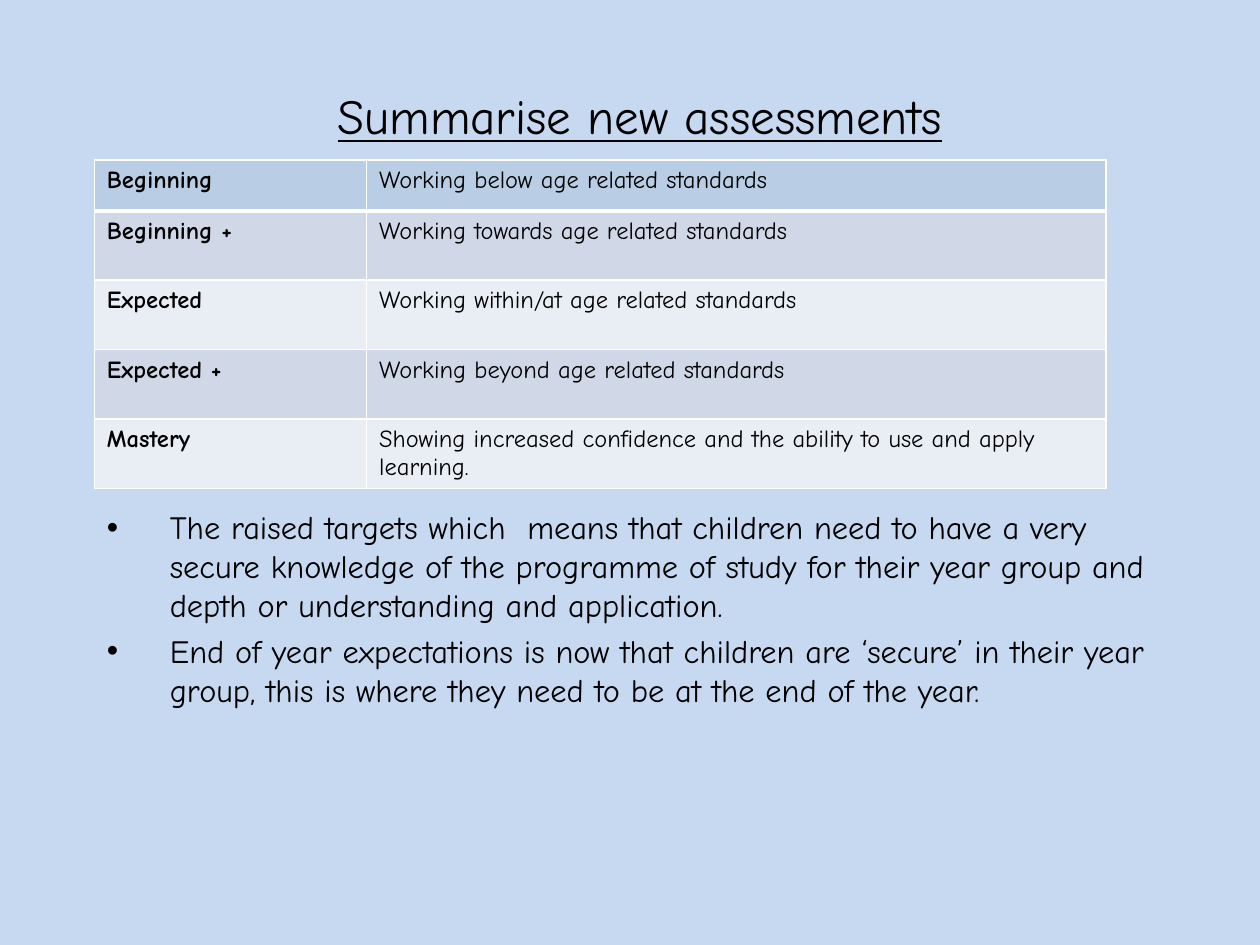
from lxml import etree
from pptx import Presentation
from pptx.dml.color import RGBColor
from pptx.enum import text as t
from pptx.oxml import ns
from pptx.util import Cm, Pt

TITLE = "Summarise new assessments"
LEVELS = [
    ("Beginning", "Working below age related standards"),
    ("Beginning +", "Working towards age related standards"),
    ("Expected", "Working within/at age related standards"),
    ("Expected +", "Working beyond age related standards"),
    ("Mastery", "Showing increased confidence and the ability to use and apply learning."),
]
POINTS = [
    "The raised targets which  means that children need to have a very secure "
    "knowledge of the programme of study for their year group and depth or "
    "understanding and application.",
    "End of year expectations is now that children are ‘secure’ in their year "
    "group, this is where they need to be at the end of the year.",
]

FONT = "Comic Neue"
BLACK = RGBColor(0x00, 0x00, 0x00)
WHITE = RGBColor(0xFF, 0xFF, 0xFF)
SKY = RGBColor(0xC6, 0xD9, 0xF1)
HEAD = RGBColor(0xB9, 0xCD, 0xE5)
BANDS = [RGBColor(0xE9, 0xED, 0xF4), RGBColor(0xD0, 0xD8, 0xE8)]
COLS = [Cm(5.49), Cm(14.91)]
ROWS = [Cm(1.02)] + [Cm(1.4)] * 4


def place(shape, left, top, width, height):
    shape.left, shape.top = Cm(left), Cm(top)
    shape.width, shape.height = Cm(width), Cm(height)


def style(para, size, bold=False, line=False):
    for run in para.runs:
        font = run.font
        font.name, font.size = FONT, Pt(size)
        font.bold, font.underline = bold, line
        font.color.rgb = BLACK


def bullet(para):
    props = para._p.get_or_add_pPr()
    props.set("marL", str(Cm(1.27)))
    props.set("indent", str(-Cm(1.27)))
    etree.SubElement(props, ns.qn("a:buFont"), typeface="Arial")
    etree.SubElement(props, ns.qn("a:buChar"), char="•")


def border(cell, base):
    """Draw white cell edges, the bottom one base points wide."""
    props = cell._tc.get_or_add_tcPr()
    edges = [("L", 1), ("R", 1), ("T", 1), ("B", base)]
    for spot, (side, width) in enumerate(edges):
        edge = etree.Element(ns.qn(f"a:ln{side}"), w=str(Pt(width)))
        fill = etree.SubElement(edge, ns.qn("a:solidFill"))
        etree.SubElement(fill, ns.qn("a:srgbClr"), val=str(WHITE))
        props.insert(spot, edge)


def add_levels(slide):
    frame = slide.shapes.add_table(
        len(LEVELS), len(COLS), Cm(1.9), Cm(3.23), sum(COLS), sum(ROWS))
    table = frame.table
    for col, width in zip(table.columns, COLS):
        col.width = width
    for r, level in enumerate(LEVELS):
        table.rows[r].height = ROWS[r]
        for c, words in enumerate(level):
            cell = table.cell(r, c)
            cell.text_frame.text = words
            style(cell.text_frame.paragraphs[0], 14, bold=c == 0)
            cell.fill.solid()
            cell.fill.fore_color.rgb = BANDS[r % 2] if r else HEAD
            border(cell, 1 if r else 3)
            if r == 1:
                cell._tc.tcPr.find(ns.qn("a:lnT")).set("w", str(Pt(3)))


def main():
    deck = Presentation()
    deck.slide_width, deck.slide_height = Cm(25.4), Cm(19.05)
    slide = deck.slides.add_slide(deck.slide_layouts[0])
    slide.background.fill.solid()
    slide.background.fill.fore_color.rgb = SKY

    title, body = slide.placeholders
    place(title, 2.31, 1.52, 21.18, 1.6)
    title.text_frame.text = TITLE
    title.text_frame.vertical_anchor = t.MSO_ANCHOR.MIDDLE
    style(title.text_frame.paragraphs[0], 28, line=True)

    place(body, 1.9, 3.73, 21.6, 12.14)
    frame = body.text_frame
    frame.text = "\n".join(POINTS)
    frame.auto_size = t.MSO_AUTO_SIZE.NONE
    frame.margin_top = Cm(6.5)
    for n, para in enumerate(frame.paragraphs):
        para.alignment = t.PP_ALIGN.LEFT
        para.space_before = Pt(4 if n else 0)
        bullet(para)
        style(para, 18.5)

    add_levels(slide)
    deck.save("out.pptx")


if __name__ == "__main__":
    main()
